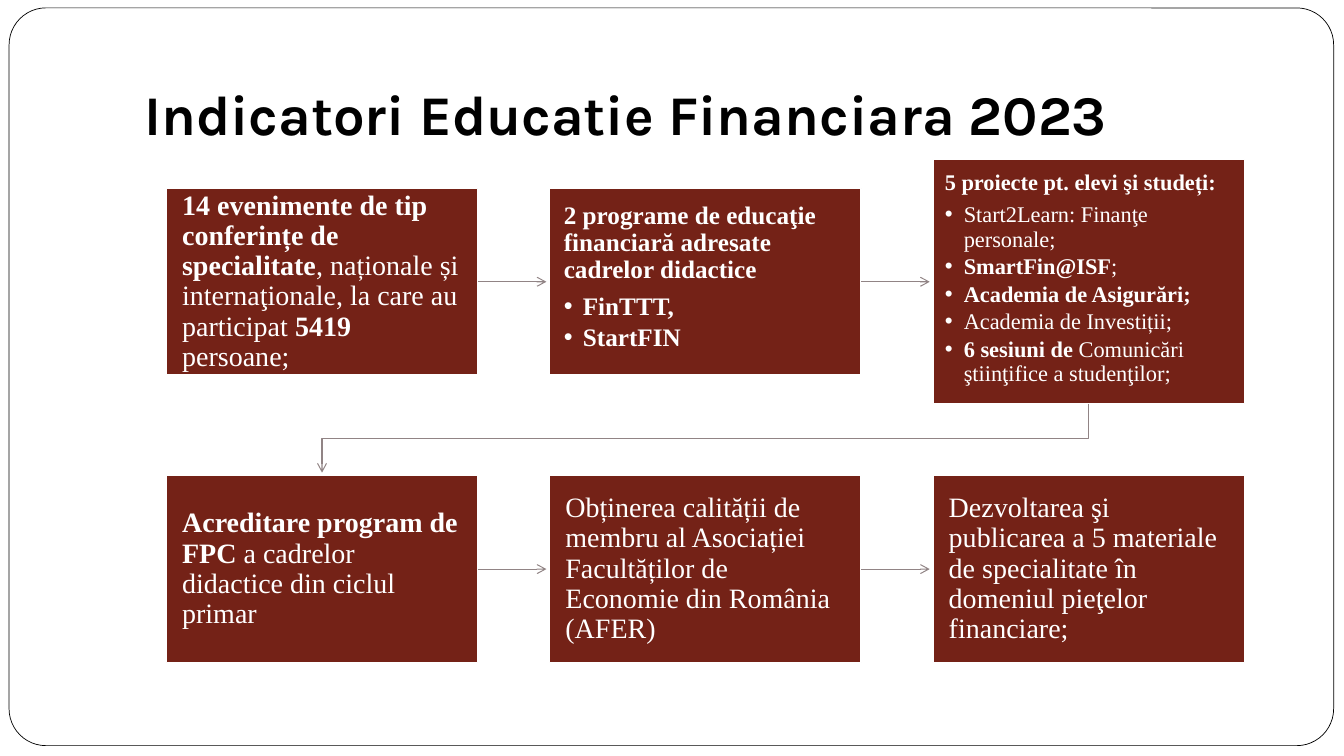
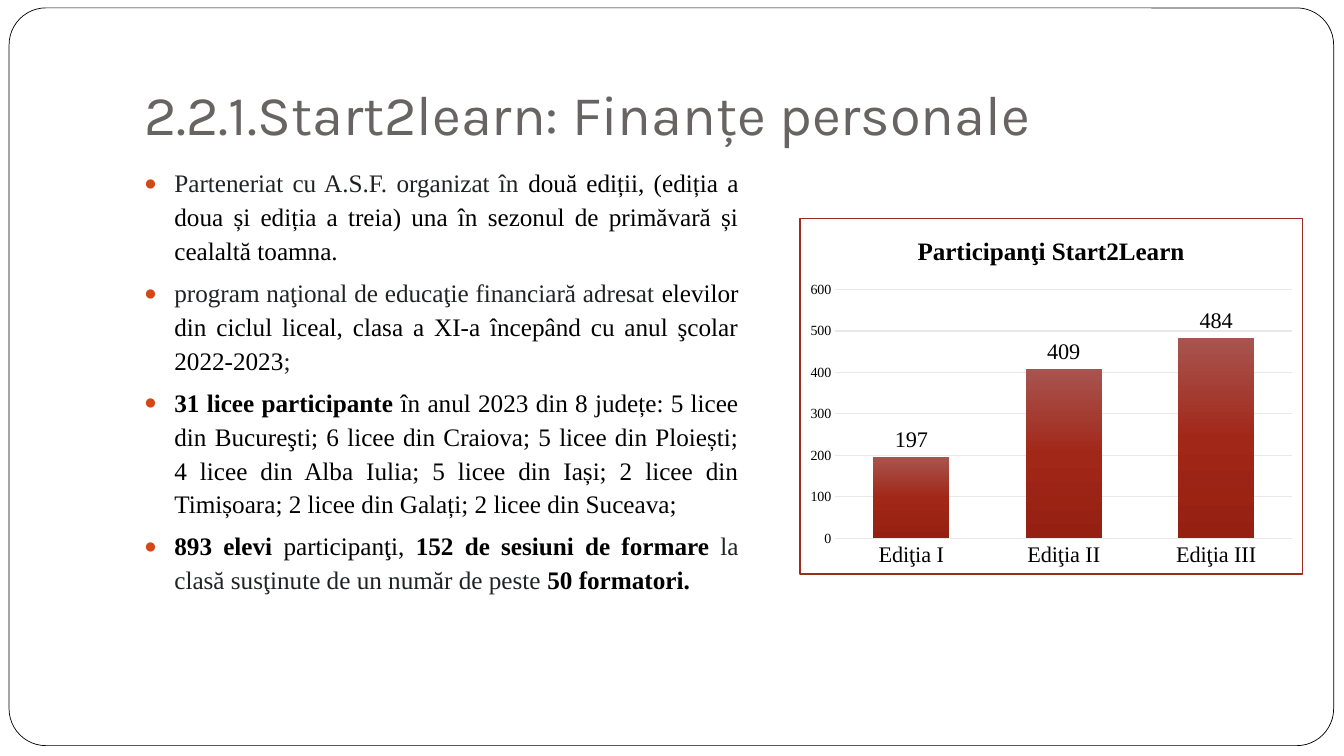
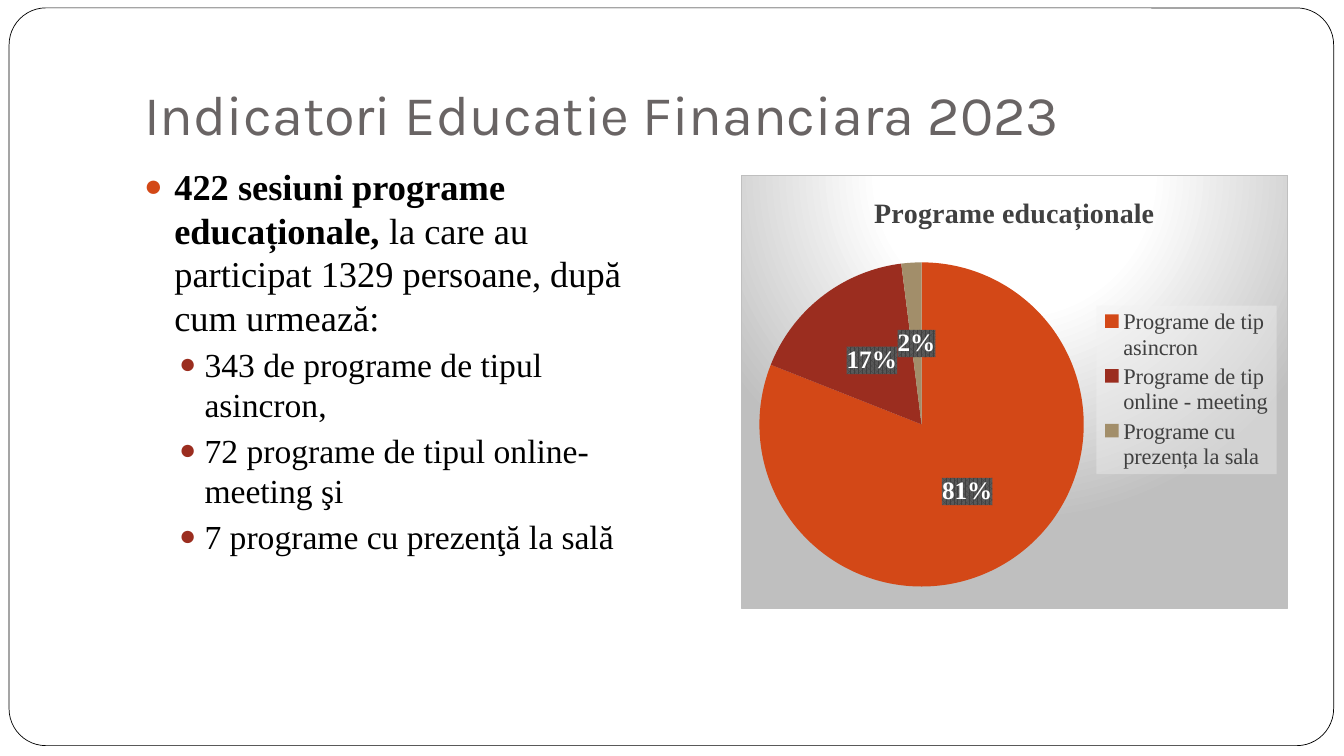
from pptx import Presentation
from pptx.chart.data import CategoryChartData
from pptx.dml.color import RGBColor
from pptx.enum.chart import XL_CHART_TYPE, XL_LABEL_POSITION, XL_LEGEND_POSITION, XL_TICK_MARK
from pptx.enum.shapes import MSO_CONNECTOR, MSO_SHAPE
from pptx.enum.text import MSO_ANCHOR, MSO_AUTO_SIZE, PP_ALIGN
from pptx.oxml import parse_xml
from pptx.oxml.ns import nsdecls, qn
from pptx.util import Cm, Pt

RECT, ROUND = MSO_SHAPE.RECTANGLE, MSO_SHAPE.ROUNDED_RECTANGLE
LINE, ELBOW = MSO_CONNECTOR.STRAIGHT, MSO_CONNECTOR.ELBOW
LEFT, JUST = PP_ALIGN.LEFT, PP_ALIGN.JUSTIFY
TOP, MID, LOW = MSO_ANCHOR.TOP, MSO_ANCHOR.MIDDLE, MSO_ANCHOR.BOTTOM
BARS, PIE = XL_CHART_TYPE.COLUMN_CLUSTERED, XL_CHART_TYPE.PIE
NO_TICK = XL_TICK_MARK.NONE

HEAD, TEXT = "Karla", "Times New Roman"
HEX = {
    "black": "000000", "white": "FFFFFF", "ink": "202224", "title": "696464",
    "box": "742217", "arrow": "918485", "orange": "D34817", "red": "9B2D1F",
    "tan": "A28E6A", "grid": "E9E8E8", "dark": "404040", "mid": "595959",
    "edge": "BFBFBF", "haze": "F2F2F2",
}

# Content: a paragraph is (level, runs); a run is (style, text),
# with style "b" for bold and "i" for ink grey
TITLES = ["Indicatori Educatie Financiara 2023",
          "2.2.1.Start2learn: Finanțe personale",
          "Indicatori Educatie Financiara 2023"]

# Boxes: text size, inset in cm, height in cm, anchor, paragraphs
BOXES = [
    (20, 0.4, 4.7, MID, [(0, [
        ("b", "14 evenimente de tip conferințe de specialitate"),
        ("", ", naționale și internaţionale, la care au participat "),
        ("b", "5419 "), ("", "persoane;")])]),
    (18, 0.36, 4.7, TOP, [
        (0, [("b", "2 programe de educaţie financiară adresate cadrelor didactice")]),
        (1, [("b", "FinTTT,")]),
        (1, [("b", "StartFIN")])]),
    (16, 0.3, 6.15, TOP, [
        (0, [("b", "5 proiecte pt. elevi şi studeți:")]),
        (1, [("", "Start2Learn: Finanţe personale;")]),
        (1, [("b", "SmartFin@ISF"), ("", ";")]),
        (1, [("b", "Academia de Asigurări;")]),
        (1, [("", "Academia de Investiții;")]),
        (1, [("b", "6 sesiuni de "), ("", "Comunicări ştiinţifice a studenţilor;")])]),
    (20, 0.4, 4.7, MID, [(0, [
        ("b", "Acreditare program de FPC "),
        ("", "a cadrelor didactice din ciclul primar")])]),
    (20, 0.4, 4.7, MID, [(0, [
        ("", "Obținerea calității de membru al Asociației Facultăților de "
             "Economie din România (AFER)")])]),
    (20, 0.4, 4.7, MID, [(0, [
        ("", "Dezvoltarea şi publicarea a 5 materiale de specialitate în "
             "domeniul pieţelor financiare;")])]),
]

START = [
    (0, [("i", "Parteneriat cu A.S.F. organizat în "),
         ("", "două ediții, (ediția a doua și ediția a treia) una în sezonul "
              "de primăvară și cealaltă toamna.")]),
    (0, [("i", "program naţional de educaţie financiară adresat "),
         ("", "elevilor din ciclul liceal, clasa a XI-a începând cu anul "
              "şcolar 2022-2023"),
         ("i", ";")]),
    (0, [("b", "31 licee participante "),
         ("", "în anul 2023 din 8 județe: 5 licee din Bucureşti; 6 licee din "
              "Craiova; 5 licee din Ploiești; 4 licee din Alba Iulia; 5 licee "
              "din Iași; 2 licee din Timișoara; 2 licee din Galați; 2 licee "
              "din Suceava;")]),
    (0, [("b", "893 elevi "), ("", "participanţi, "),
         ("b", "152 de sesiuni de formare"),
         ("i", " la clasă susţinute de un număr de peste "),
         ("b", "50 formatori.")]),
]
COUNTS = {"Ediţia I": 197, "Ediţia II": 409, "Ediţia III": 484}

KINDS = [
    (0, [("b", "422 sesiuni programe educaționale,"),
         ("", " la care au participat 1329 persoane, după cum urmează:")]),
    (1, [("", "343 de programe de tipul asincron,")]),
    (1, [("", "72 programe de tipul online-meeting şi")]),
    (1, [("", "7 programe cu prezenţă la sală")]),
]
SHARES = {"Programe de tip asincron": 81,
          "Programe de tip online - meeting": 17,
          "Programe cu prezența la sala": 2}

# List levels: bullet, its colour, its size in %, margin and hang in cm
DOTS = [("●", "orange", 85, 0.76, 0.76), ("●", "red", 85, 1.52, 0.64)]
POINT = ("•", "white", 100, 0.48, 0.48)


# Text
def rgb(name):
    return RGBColor.from_string(HEX[name])


def style(font, size, color, bold=None, name=TEXT):
    font.name, font.size, font.bold = name, Pt(size), bold
    font.color.rgb = rgb(color)


def bullet(para, char, color, size, left, hang):
    props = para._p.get_or_add_pPr()
    props.set("marL", str(Cm(left)))
    props.set("indent", str(-Cm(hang)))
    for xml in (f'<a:buClr {nsdecls("a")}><a:srgbClr val="{HEX[color]}"/></a:buClr>',
                f'<a:buSzPct {nsdecls("a")} val="{size * 1000}"/>',
                f'<a:buFont {nsdecls("a")} typeface="Arial"/>',
                f'<a:buChar {nsdecls("a")} char="{char}"/>'):
        props.append(parse_xml(xml))


def write(frame, paras, color, sizes, dots, gaps, after=False, lead=1.0, align=LEFT):
    """Fill a frame; sizes, dots and gaps (pt) are given per level."""
    frame.word_wrap, frame.auto_size = True, MSO_AUTO_SIZE.NONE
    for i, (level, runs) in enumerate(paras):
        para = frame.add_paragraph() if i else frame.paragraphs[0]
        para.level = level
        if dots[level]:
            bullet(para, *dots[level])
        para.alignment, para.line_spacing = align, lead
        para.space_before = Pt(0 if after or not i else gaps[level])
        para.space_after = Pt(gaps[level] if after else 0)
        style(para.font, sizes[level], color, all(k == "b" for k, _ in runs))
        for kind, text in runs:
            run = para.add_run()
            run.text = text
            if len(runs) > 1:
                run.font.bold = kind == "b"
            if kind == "i":
                run.font.color.rgb = rgb("ink")


# Slide parts
def place(shape, left, top, width, height):
    shape.left, shape.top = Cm(left), Cm(top)
    shape.width, shape.height = Cm(width), Cm(height)


def block(slide, kind, spot, fill, line, width):
    shape = slide.shapes.add_shape(kind, *map(Cm, spot))
    shape.shadow.inherit = False
    shape.fill.solid()
    shape.fill.fore_color.rgb = rgb(fill)
    shape.line.color.rgb = rgb(line)
    shape.line.width = Pt(width)
    return shape


def arrow(slide, kind, *ends):
    link = slide.shapes.add_connector(kind, *map(Cm, ends))
    link.line.color.rgb = rgb("arrow")
    link.line.width = Pt(0.75)
    props = link.element.spPr
    props.find(qn("a:ln")).append(parse_xml(f'<a:tailEnd {nsdecls("a")} type="arrow"/>'))
    props.append(parse_xml(f'<a:effectLst {nsdecls("a")}/>'))
    return link


def page(deck, layout, title, color="title", bold=False):
    slide = deck.slides.add_slide(deck.slide_layouts[layout])
    head = slide.shapes.title
    place(head, 3.38, 0.76, 28.78, 3.18)
    frame = head.text_frame
    frame.text = title
    frame.word_wrap, frame.auto_size = True, MSO_AUTO_SIZE.NONE
    frame.vertical_anchor = LOW
    frame.margin_bottom = Cm(0.25)
    para = frame.paragraphs[0]
    para.alignment = LEFT
    style(para.font, 40, color, bold, HEAD)
    return slide


def border(deck, slide):
    """Put the rounded frame on the master, behind everything."""
    edge = block(slide, ROUND, (0.23, 0.2, 33.38, 18.59), "white", "black", 0.5)
    edge.adjustments[0] = 0.05
    edge.element.nvSpPr.cNvPr.set("id", "20")
    deck.slide_master.element.cSld.spTree.insert(2, edge.element)


# Charts
def solid(color, alpha=100):
    return (f'<a:solidFill><a:srgbClr val="{HEX[color]}">'
            f'<a:alpha val="{alpha * 1000}"/></a:srgbClr></a:solidFill>')


def grad(stops, way):
    steps = "".join(f'<a:gs pos="{pos * 1000}"><a:srgbClr val="{tone}"/></a:gs>'
                    for pos, tone in stops)
    return f'<a:gradFill rotWithShape="1"><a:gsLst>{steps}</a:gsLst>{way}</a:gradFill>'


def skin(fill, line="<a:noFill/>", width=0.75):
    return parse_xml(f'<c:spPr {nsdecls("c", "a")}>{fill}'
                     f'<a:ln w="{Pt(width)}">{line}</a:ln></c:spPr>')


def layout(node, index, inner, *spot):
    old = node.find(qn("c:layout"))
    if old is not None:
        node.remove(old)
    parts = '<c:layoutTarget val="inner"/>' if inner else ""
    parts += '<c:xMode val="edge"/><c:yMode val="edge"/>'
    parts += "".join(f'<c:{key} val="{val}"/>' for key, val in zip("xywh", spot))
    node.insert(index, parse_xml(f'<c:layout {nsdecls("c")}><c:manualLayout>{parts}'
                                 '</c:manualLayout></c:layout>'))


def graph(slide, kind, spot, name, data, head, plot, cover):
    """Add a one-series chart; head is the title's size and colour."""
    table = CategoryChartData()
    table.categories = list(data)
    table.add_series(name, list(data.values()))
    chart = slide.shapes.add_chart(kind, *map(Cm, spot), table).chart
    style(chart.font, 10, "black")
    chart.has_title = True
    chart.has_legend = False
    frame = chart.chart_title.text_frame
    frame.text = name
    style(frame.paragraphs[0].font, *head, True)
    chart.chart_title.include_in_layout = False
    body = chart.element.find(qn("c:chart"))
    body.addnext(cover)
    layout(body.find(qn("c:plotArea")), 0, True, *plot)
    return chart


def labels(chart, spot, size, color, bold):
    tags = chart.plots[0].series[0].data_labels
    style(tags.font, size, color, bold)
    tags.position = spot
    return tags


# Slides
def flow(deck):
    slide = page(deck, 5, TITLES[0], "black", True)
    border(deck, slide)
    left, wide, step, mids, gap = 4.19, 7.85, 9.66, (7.1, 14.34), 0.08
    for i, (size, inset, high, anchor, paras) in enumerate(BOXES):
        row, col = divmod(i, 3)
        x, y = left + col * step, mids[row]
        box = block(slide, RECT, (x, y - high / 2, wide, high), "box", "white", 1)
        frame = box.text_frame
        frame.margin_left = frame.margin_right = Cm(inset)
        frame.margin_top = frame.margin_bottom = Cm(inset)
        frame.vertical_anchor = anchor
        write(frame, paras, "white", (size, size), (None, POINT),
              (size * 0.35, size * 0.15), after=True, lead=0.9)
        if col < 2:
            arrow(slide, LINE, x + wide, y, x + step - gap, y)
    # The turn to the second row runs down, left, down
    top = mids[0] + BOXES[2][2] / 2
    low = mids[1] - BOXES[3][2] / 2 - gap
    span, drop = 2 * step, low - top
    x, y = left + step + wide / 2, (top + low) / 2
    turn = arrow(slide, ELBOW, x - drop / 2, y - span / 2, x + drop / 2, y + span / 2)
    turn.element.spPr.get_or_add_xfrm().set("rot", "5400000")


def course(deck):
    slide = page(deck, 1, TITLES[1])
    body = slide.placeholders[1]
    place(body, 3.38, 4.01, 15.49, 12.7)
    write(body.text_frame, START, "black", (18,), DOTS, (5.8,), lead=1.12, align=JUST)
    chart = graph(slide, BARS, (20.14, 5.49, 12.7, 8.99), "Participanţi Start2Learn",
                  COUNTS, (18, "black"), (0.07, 0.2, 0.91, 0.7),
                  skin(solid("white"), solid("red"), 1))
    plot = chart.plots[0]
    plot.gap_width, plot.overlap, plot.vary_by_categories = 100, -24, False
    labels(chart, XL_LABEL_POSITION.OUTSIDE_END, 16, "black", False).show_value = True
    tones = [(0, "A8544F"), (50, "A12819"), (100, "951F11")]
    bars = plot.series[0]
    bars.format.fill.solid()
    shade = skin(grad(tones, '<a:lin ang="5400000" scaled="0"/>'))
    old = bars.format.fill and bars._element.find(qn("c:spPr"))
    old.getparent().replace(old, shade)
    cats, vals = chart.category_axis, chart.value_axis
    for axis in (cats, vals):
        axis.major_tick_mark = axis.minor_tick_mark = NO_TICK
    vals.maximum_scale, vals.minimum_scale, vals.major_unit = 600, 0, 100
    vals.format.line.fill.background()
    style(vals.tick_labels.font, 10, "black")
    style(cats.tick_labels.font, 16, "black")
    for line in (cats.format.line, vals.major_gridlines.format.line):
        line.color.rgb = rgb("grid")
        line.width = Pt(0.75)


def split(deck):
    slide = page(deck, 1, TITLES[2])
    body = slide.placeholders[1]
    place(body, 3.38, 4.01, 13.72, 12.7)
    write(body.text_frame, KINDS, "black", (26, 24), DOTS, (5.8, 3.7))
    tones = [(0, HEX["white"]), (39, HEX["white"]), (100, HEX["edge"])]
    glow = grad(tones, '<a:path path="circle"><a:fillToRect l="50000" t="-80000" '
                       'r="50000" b="180000"/></a:path>')
    chart = graph(slide, PIE, (18.67, 4.42, 13.79, 10.92), "Programe educaționale",
                  SHARES, (20, "dark"), (0.03, 0.2, 0.6, 0.75),
                  skin(glow, solid("edge")))
    chart.plots[0].vary_by_categories = True
    pie = chart.plots[0].series[0]
    for i, color in enumerate(("orange", "red", "tan")):
        fill = pie.points[i].format.fill
        fill.solid()
        fill.fore_color.rgb = rgb(color)
    tags = labels(chart, XL_LABEL_POSITION.CENTER, 18, "white", True)
    tags.show_percentage, tags.show_value = True, False
    tags.number_format, tags.number_format_is_linked = "0%", False
    weave = (f'<a:pattFill prst="pct75"><a:fgClr><a:srgbClr val="{HEX["dark"]}"/></a:fgClr>'
             f'<a:bgClr><a:srgbClr val="{HEX["mid"]}"/></a:bgClr></a:pattFill>')
    chart.has_legend = True
    key = chart.legend
    key.position, key.include_in_layout = XL_LEGEND_POSITION.RIGHT, False
    style(key.font, 16, "dark")
    layout(key._element, 1, False, 0.65, 0.3, 0.33, 0.39)
    for part, fill in ((tags, weave), (key, solid("haze", 39))):
        part._element.find(qn("c:txPr")).addprevious(skin(fill))


def main():
    deck = Presentation()
    deck.slide_width, deck.slide_height = Cm(33.87), Cm(19.05)
    for build in (flow, course, split):
        build(deck)
    deck.save("out.pptx")


if __name__ == "__main__":
    main()
